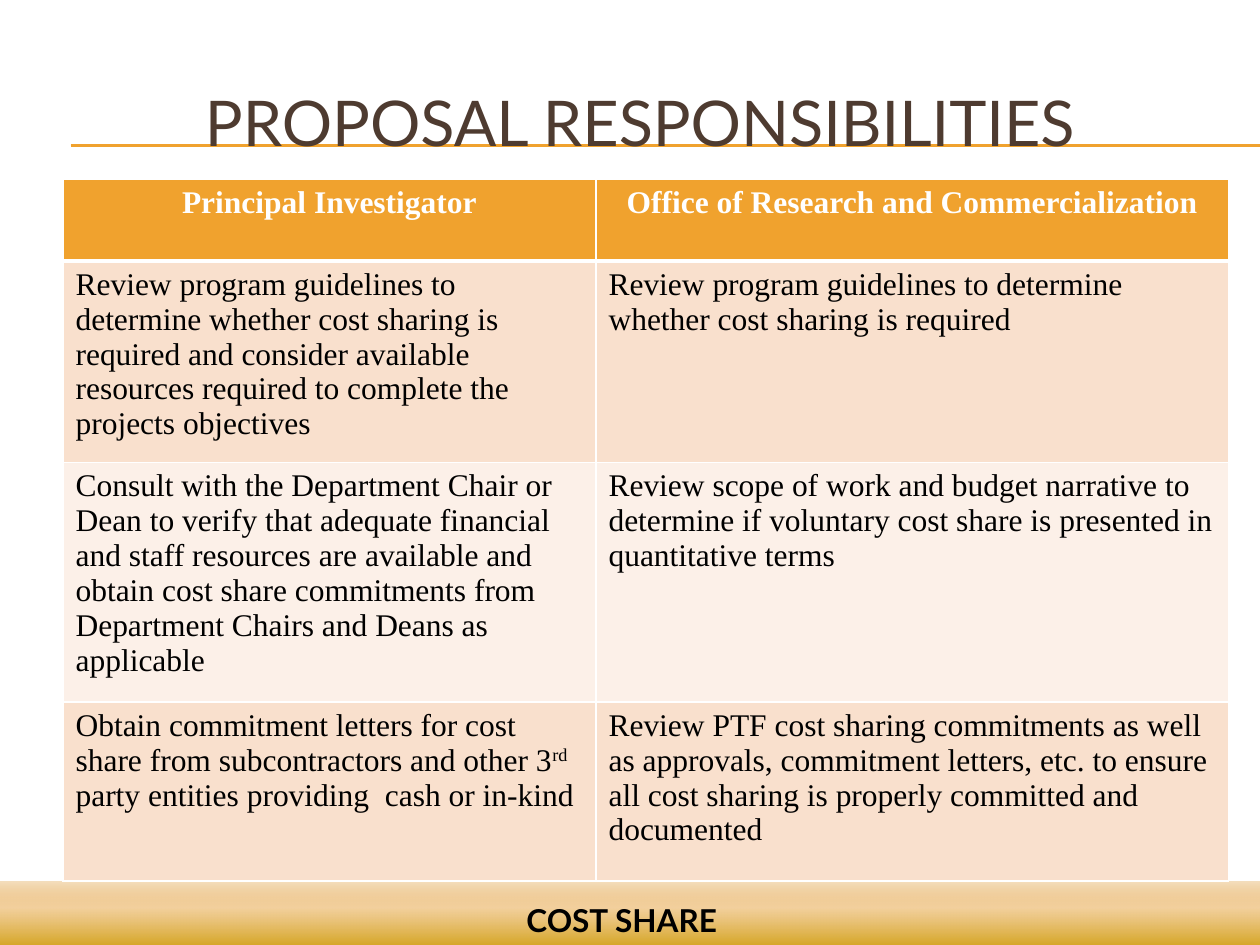
from lxml import etree
from pptx import Presentation
from pptx.dml.color import RGBColor
from pptx.enum.shapes import MSO_CONNECTOR, MSO_SHAPE
from pptx.enum.text import MSO_ANCHOR, PP_ALIGN
from pptx.oxml import parse_xml
from pptx.oxml.ns import nsdecls, qn
from pptx.util import Inches, Pt

COLORS = {
    "accent": "F0A22E", "title": "4E3B30", "text": "000000", "white": "FFFFFF",
    "band_dark": "F9E0CD", "band_light": "FCF0E8",
    "footer_bottom": "CC9900", "footer_middle": "EFC17E", "footer_top": "D68000",
}
TITLE_FONT = "Lato"
TABLE_FONT = "Times New Roman"
COLUMN_WIDTHS = [4.23, 5.02]
ROW_HEIGHTS = [0.65, 1.54, 1.82, 1.42]

# Each cell is a list of runs; a run is its text and whether it is superscript.
ROWS = [
    [[("Principal Investigator", False)],
     [("Office of Research and Commercialization", False)]],
    [[("Review program guidelines to determine whether cost sharing is required and "
       "consider available resources required to complete the projects objectives", False)],
     [("Review program guidelines to determine whether cost sharing is required", False)]],
    [[("Consult with the Department Chair or Dean to verify that adequate financial and "
       "staff resources are available and obtain cost share commitments from "
       "Department Chairs and Deans as applicable", False)],
     [("Review scope of work and budget narrative to determine if voluntary cost share "
       "is presented in quantitative terms", False)]],
    [[("Obtain commitment letters for cost share from subcontractors and other 3", False),
      ("rd", True),
      (" party entities providing  cash or in-kind", False)],
     [("Review PTF cost sharing commitments as well as approvals, commitment letters, "
       "etc. to ensure all cost sharing is properly committed and documented", False)]],
]


def rgb(name):
    return RGBColor.from_string(COLORS[name])


def add_run(paragraph, text, font_name, size, color, bold=False):
    run = paragraph.add_run()
    run.text = text
    run.font.name = font_name
    run.font.size = Pt(size)
    run.font.bold = bold
    run.font.color.rgb = rgb(color)
    return run


def add_rule(slide, top):
    line = slide.shapes.add_connector(
        MSO_CONNECTOR.STRAIGHT, Inches(0.56), Inches(top), Inches(10), Inches(top))
    line.line.color.rgb = rgb("accent")
    line.line.width = Pt(0.75)
    etree.SubElement(line._element.spPr, qn("a:effectLst"))


def add_footer_band(slide):
    band = slide.shapes.add_shape(
        MSO_SHAPE.RECTANGLE, Inches(-0.01), Inches(7), Inches(10.03), Inches(0.58))
    band.shadow.inherit = False
    band.line.fill.background()
    stops = [(0, "footer_bottom", 100), (65, "footer_middle", 75), (100, "footer_top", 25)]
    stop_xml = "".join(
        f'<a:gs pos="{position * 1000}"><a:srgbClr val="{COLORS[color]}">'
        f'<a:alpha val="{opacity * 1000}"/></a:srgbClr></a:gs>'
        for position, color, opacity in stops)
    gradient = parse_xml(
        f'<a:gradFill {nsdecls("a")} rotWithShape="1"><a:gsLst>{stop_xml}</a:gsLst>'
        '<a:lin ang="16200000" scaled="0"/></a:gradFill>')
    band._element.spPr.find(qn("a:prstGeom")).addnext(gradient)


def add_text(slide, box, text, size, color, bold=False,
             align=PP_ALIGN.LEFT, anchor=MSO_ANCHOR.TOP):
    shape = slide.shapes.add_textbox(*[Inches(value) for value in box])
    frame = shape.text_frame
    frame.word_wrap = True
    frame.vertical_anchor = anchor
    paragraph = frame.paragraphs[0]
    paragraph.alignment = align
    add_run(paragraph, text, TITLE_FONT, size, color, bold)


def set_borders(cell, widths):
    """Draw white borders; widths maps each side's tag to points."""
    properties = cell._tc.get_or_add_tcPr()
    for index, (side, width) in enumerate(widths.items()):
        properties.insert(index, parse_xml(
            f'<a:{side} {nsdecls("a")} w="{Pt(width)}"><a:solidFill>'
            f'<a:srgbClr val="{COLORS["white"]}"/></a:solidFill></a:{side}>'))


def fill_cell(cell, runs, row_index):
    is_header = row_index == 0
    band = "band_dark" if row_index % 2 else "band_light"
    cell.fill.solid()
    cell.fill.fore_color.rgb = rgb("accent" if is_header else band)
    set_borders(cell, {"lnL": 1, "lnR": 1, "lnT": 3 if row_index == 1 else 1,
                       "lnB": 3 if is_header else 1})
    paragraph = cell.text_frame.paragraphs[0]
    paragraph.alignment = PP_ALIGN.CENTER if is_header else PP_ALIGN.LEFT
    for text, superscript in runs:
        run = add_run(paragraph, text, TABLE_FONT, 18,
                      "white" if is_header else "text", is_header)
        if superscript:
            run.font._element.set("baseline", "30000")


def add_responsibilities_table(slide):
    table = slide.shapes.add_table(
        len(ROWS), len(COLUMN_WIDTHS), Inches(0.5), Inches(1.42),
        Inches(sum(COLUMN_WIDTHS)), Inches(sum(ROW_HEIGHTS))).table
    for column, width in zip(table.columns, COLUMN_WIDTHS):
        column.width = Inches(width)
    for row_index, (row, height) in enumerate(zip(table.rows, ROW_HEIGHTS)):
        row.height = Inches(height)
        for cell, runs in zip(row.cells, ROWS[row_index]):
            fill_cell(cell, runs, row_index)


def main():
    presentation = Presentation()
    presentation.slide_width = Inches(10)
    presentation.slide_height = Inches(7.5)
    slide = presentation.slides.add_slide(presentation.slide_layouts[6])
    for top in (1.15, 1.16):
        add_rule(slide, top)
    add_footer_band(slide)
    add_text(slide, (0.33, 0.5, 9.5, 0.92), "PROPOSAL RESPONSIBILITIES", 36, "title",
             align=PP_ALIGN.CENTER, anchor=MSO_ANCHOR.MIDDLE)
    add_responsibilities_table(slide)
    add_text(slide, (4.08, 7.1, 2, 0.4), "COST SHARE", 18, "text", bold=True)
    presentation.save("out.pptx")


if __name__ == "__main__":
    main()
